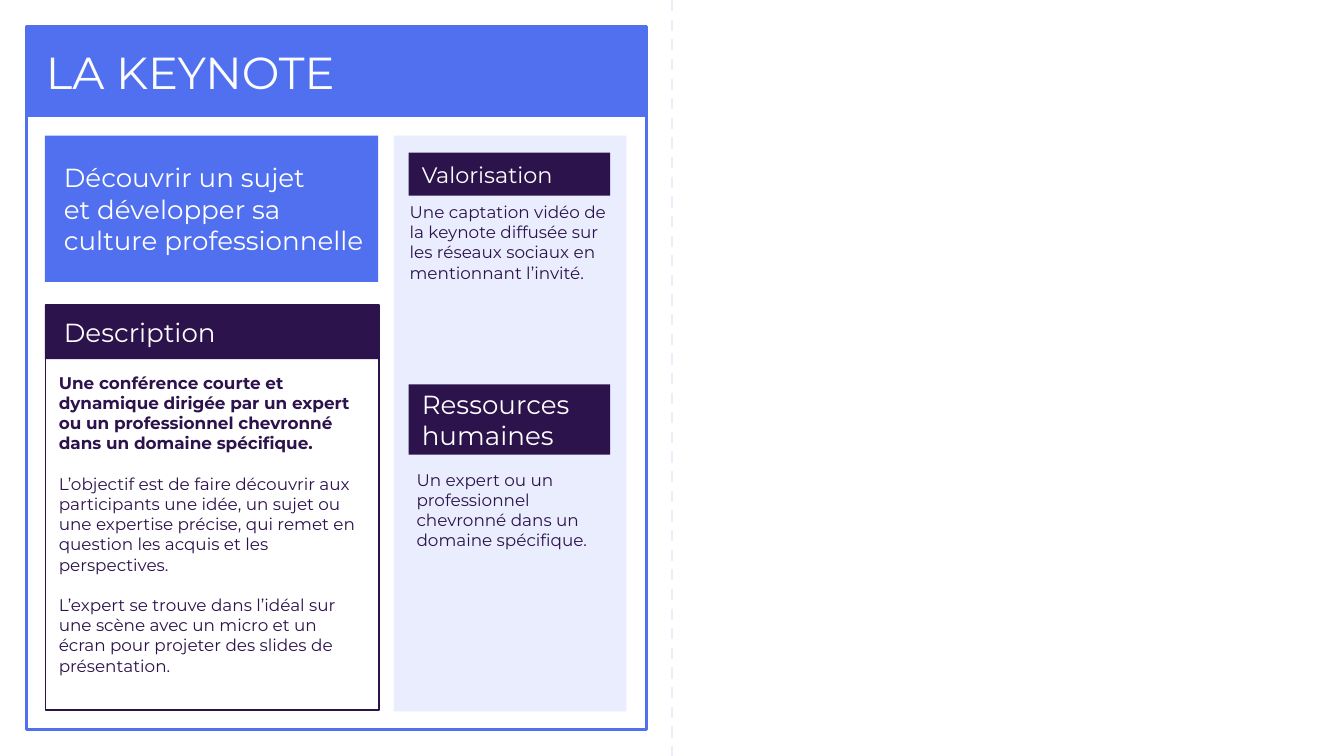
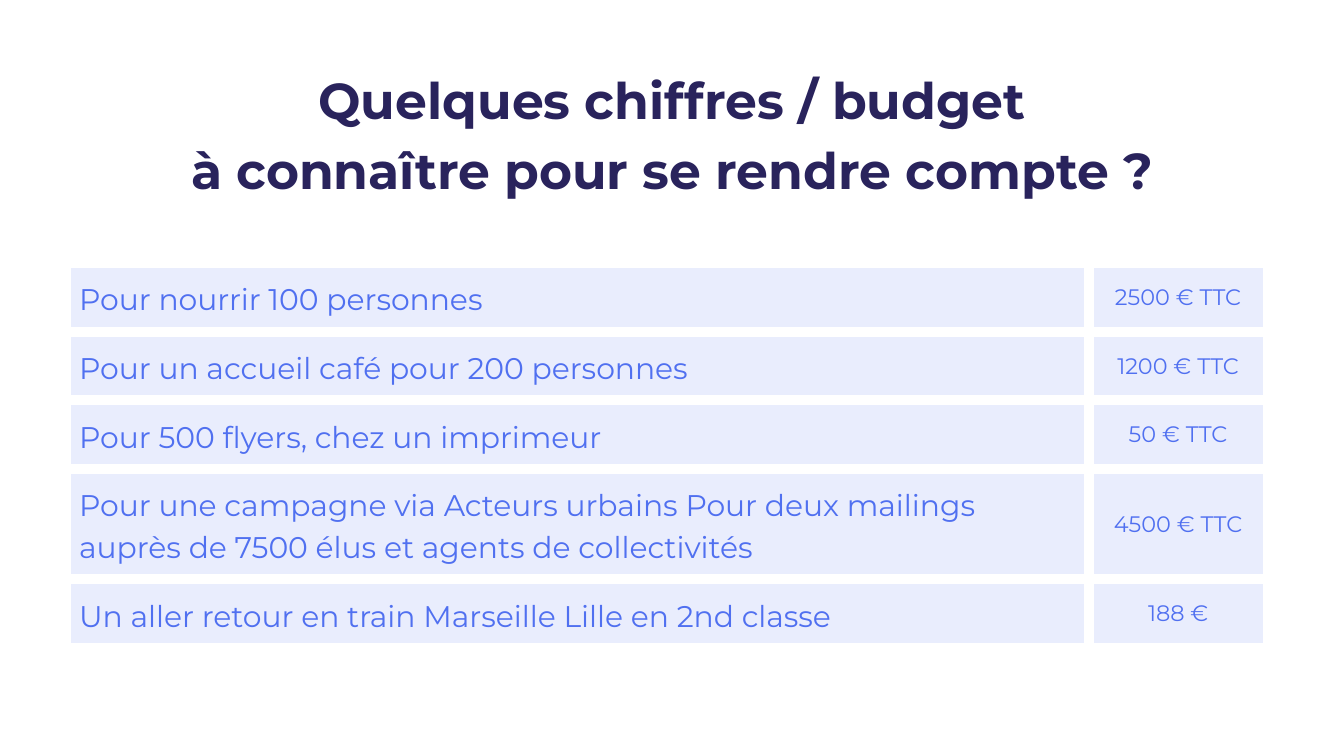
"""Build the keynote sheet and the budget slide."""
from lxml import etree
from pptx import Presentation
from pptx import util as u
from pptx.dml.color import RGBColor
from pptx.enum import dml, shapes, text
from pptx.oxml import ns

FONT = "Montserrat"
INSET = 7.2
COLORS = {
    "blue": "5070F0",
    "plum": "2D134B",
    "navy": "29235C",
    "pale": "E9EDFD",
    "white": "FFFFFF",
    "off_white": "FCFCFC",
}
DESCRIPTION = [
    "Une conférence courte et dynamique dirigée par un expert ou un professionnel "
    "chevronné dans un domaine spécifique.",
    "L’objectif est de faire découvrir aux participants une idée, un sujet ou une "
    "expertise précise, qui remet en question les acquis et les perspectives.",
    "L’expert se trouve dans l’idéal sur une scène avec un micro et un écran pour "
    "projeter des slides de présentation.",
]
BUDGET = [
    ("Pour nourrir 100 personnes", "2500 € TTC"),
    ("Pour un accueil café pour 200 personnes", "1200 € TTC"),
    ("Pour 500 flyers, chez un imprimeur", "50 € TTC"),
    ("Pour une campagne via Acteurs urbains Pour deux mailings auprès de 7500 élus "
     "et agents de collectivités", "4500 € TTC"),
    ("Un aller retour en train Marseille Lille en 2nd classe", "188 €"),
]


def rgb(name):
    """Return the named colour."""
    return RGBColor.from_string(COLORS[name])


def style_paragraph(paragraph, size, color, bold=False, align=text.PP_ALIGN.LEFT):
    """Format a paragraph and all its runs."""
    paragraph.alignment = align
    for run in paragraph.runs:
        run.font.name = FONT
        run.font.size = u.Pt(size)
        run.font.bold = bold
        run.font.color.rgb = rgb(color)


def set_insets(target, left=INSET):
    """Give a text frame or a table cell its inner margins."""
    target.margin_left = u.Pt(left)
    target.margin_top = target.margin_right = target.margin_bottom = u.Pt(INSET)


def fill_frame(frame, paragraphs, size, color, anchor, indent=0):
    """Write plain paragraphs into a wrapped text frame."""
    frame.text = "\n".join(paragraphs)
    frame.word_wrap = True
    frame.vertical_anchor = anchor
    set_insets(frame, INSET + indent)
    for paragraph in frame.paragraphs:
        style_paragraph(paragraph, size, color)


def paint(shape, fill=None, line=None, width=0.75):
    """Set the fill and outline of a shape."""
    if fill:
        shape.fill.solid()
        shape.fill.fore_color.rgb = rgb(fill)
    else:
        shape.fill.background()
    if line:
        shape.line.color.rgb = rgb(line)
        shape.line.width = u.Pt(width)
    else:
        shape.line.fill.background()


def add_box(slide, bounds, fill=None, line=None, width=0.75):
    """Add a rectangle without shadow."""
    shape = slide.shapes.add_shape(shapes.MSO_SHAPE.RECTANGLE, *map(u.Pt, bounds))
    shape.shadow.inherit = False
    paint(shape, fill, line, width)
    return shape


def add_heading(slide, bounds, fill, words, size=14, indent=0):
    """Add a filled rectangle with a white heading."""
    shape = add_box(slide, bounds, fill)
    fill_frame(shape.text_frame, [words], size, "white", text.MSO_ANCHOR.MIDDLE, indent)


def add_body(slide, bounds, paragraphs, indent=0):
    """Add a small text box and return its text frame."""
    frame = slide.shapes.add_textbox(*map(u.Pt, bounds)).text_frame
    fill_frame(frame, paragraphs, 9, "plum", text.MSO_ANCHOR.TOP, indent)
    frame.auto_size = text.MSO_AUTO_SIZE.SHAPE_TO_FIT_TEXT
    return frame


def set_title(slide, bounds, words, size, color, anchor, indent=0):
    """Place the title placeholder and write its text."""
    title = slide.shapes.title
    title.left, title.top, title.width, title.height = map(u.Pt, bounds)
    fill_frame(title.text_frame, [words], size, color, anchor, indent)
    title.text_frame.auto_size = text.MSO_AUTO_SIZE.NONE
    return title


def add_fold_line(slide, x, height):
    """Add the dashed vertical line that halves the sheet."""
    line = slide.shapes.add_connector(
        shapes.MSO_CONNECTOR.STRAIGHT, u.Pt(x), u.Pt(0), u.Pt(x), u.Pt(height))
    line.line.color.rgb = rgb("pale")
    line.line.width = u.Pt(1.5)
    line.line.dash_style = dml.MSO_LINE.DASH
    etree.SubElement(line._element.spPr, ns.qn("a:effectLst"))


def set_borders(cell, color, width):
    """Draw the four borders of a cell."""
    properties = cell._tc.get_or_add_tcPr()
    for index, side in enumerate(("lnL", "lnR", "lnT", "lnB")):
        border = etree.Element(ns.qn(f"a:{side}"), w=str(int(u.Pt(width))))
        fill = etree.SubElement(border, ns.qn("a:solidFill"))
        etree.SubElement(fill, ns.qn("a:srgbClr"), val=COLORS[color])
        properties.insert(index, border)


def fill_cell(cell, words, size, align):
    """Write and format one table cell."""
    cell.text = words
    cell.vertical_anchor = text.MSO_ANCHOR.MIDDLE
    set_insets(cell)
    cell.fill.solid()
    cell.fill.fore_color.rgb = rgb("pale")
    set_borders(cell, "white", 6)
    style_paragraph(cell.text_frame.paragraphs[0], size, "blue", align=align)


def add_budget_table(slide, left, top, widths, row_height):
    """Add the table of expenses and prices."""
    table = slide.shapes.add_table(
        len(BUDGET), len(widths), u.Pt(left), u.Pt(top),
        u.Pt(sum(widths)), u.Pt(row_height * len(BUDGET))).table
    table.first_row = table.horz_banding = False
    for column, width in zip(table.columns, widths):
        column.width = u.Pt(width)
    for row, (expense, price) in zip(table.rows, BUDGET):
        row.height = u.Pt(row_height)
        fill_cell(row.cells[0], expense, 16, text.PP_ALIGN.LEFT)
        paragraph = row.cells[0].text_frame.paragraphs[0]
        paragraph.line_spacing = 1.15
        paragraph.space_after = u.Pt(12)
        fill_cell(row.cells[1], price, 12, text.PP_ALIGN.CENTER)


def build_keynote(slide):
    """Build the sheet that describes the keynote format."""
    left, width, indent = 24, 178.6, 3
    title = set_title(slide, (14.4, 14.4, 332, 48.2), "LA KEYNOTE", 24, "off_white",
                      text.MSO_ANCHOR.MIDDLE, indent)
    paint(title, "blue", "blue")
    add_box(slide, (14.4, 14.4, 332, 376.6), line="blue", width=1.5)
    add_box(slide, (left + 0.4, 163.4, width, 217), line="plum")
    add_box(slide, (211, 72.7, 124.6, 308.4), "pale")

    add_heading(slide, (left, 72.7, width, 78.3), "blue",
                "Découvrir un sujet\vet développer sa culture professionnelle", indent=indent)
    add_heading(slide, (left, 163.4, width, 29), "plum", "Description", indent=indent)
    frame = add_body(slide, (left + 0.4, 192.4, width, 189.4), DESCRIPTION)
    for run in frame.paragraphs[0].runs:
        run.font.bold = True
    for paragraph in frame.paragraphs[1:]:
        paragraph.space_before = u.Pt(10.8)

    add_heading(slide, (218.9, 81.8, 108, 23), "plum", "Valorisation", 12)
    add_body(slide, (212.4, 100.8, 124, 58.3),
             ["Une captation vidéo de la keynote diffusée sur les réseaux sociaux "
              "en mentionnant l’invité."])
    add_heading(slide, (218.9, 206, 108, 37.6), "plum", "Ressources humaines")
    add_body(slide, (213, 244.2, 124, 58.3),
             ["Un expert ou un professionnel chevronné dans un domaine spécifique."], indent)
    add_fold_line(slide, 360, 405)


def build_budget(slide):
    """Build the slide of key figures."""
    title = set_title(slide, (0, 25.2, 720, 85),
                      "Quelques chiffres / budget\và connaître pour se rendre compte ?",
                      27, "navy", text.MSO_ANCHOR.TOP)
    paragraph = title.text_frame.paragraphs[0]
    style_paragraph(paragraph, 27, "navy", True, text.PP_ALIGN.CENTER)
    paragraph.line_spacing = 1.15
    paragraph.space_after = u.Pt(12)
    add_budget_table(slide, 35.2, 141, (548, 96), 30.4)


def main():
    """Create the presentation and save it."""
    presentation = Presentation()
    presentation.slide_width, presentation.slide_height = u.Pt(720), u.Pt(405)
    title_only = presentation.slide_layouts[5]
    for build in (build_keynote, build_budget):
        build(presentation.slides.add_slide(title_only))
    presentation.save("out.pptx")


if __name__ == "__main__":
    main()
